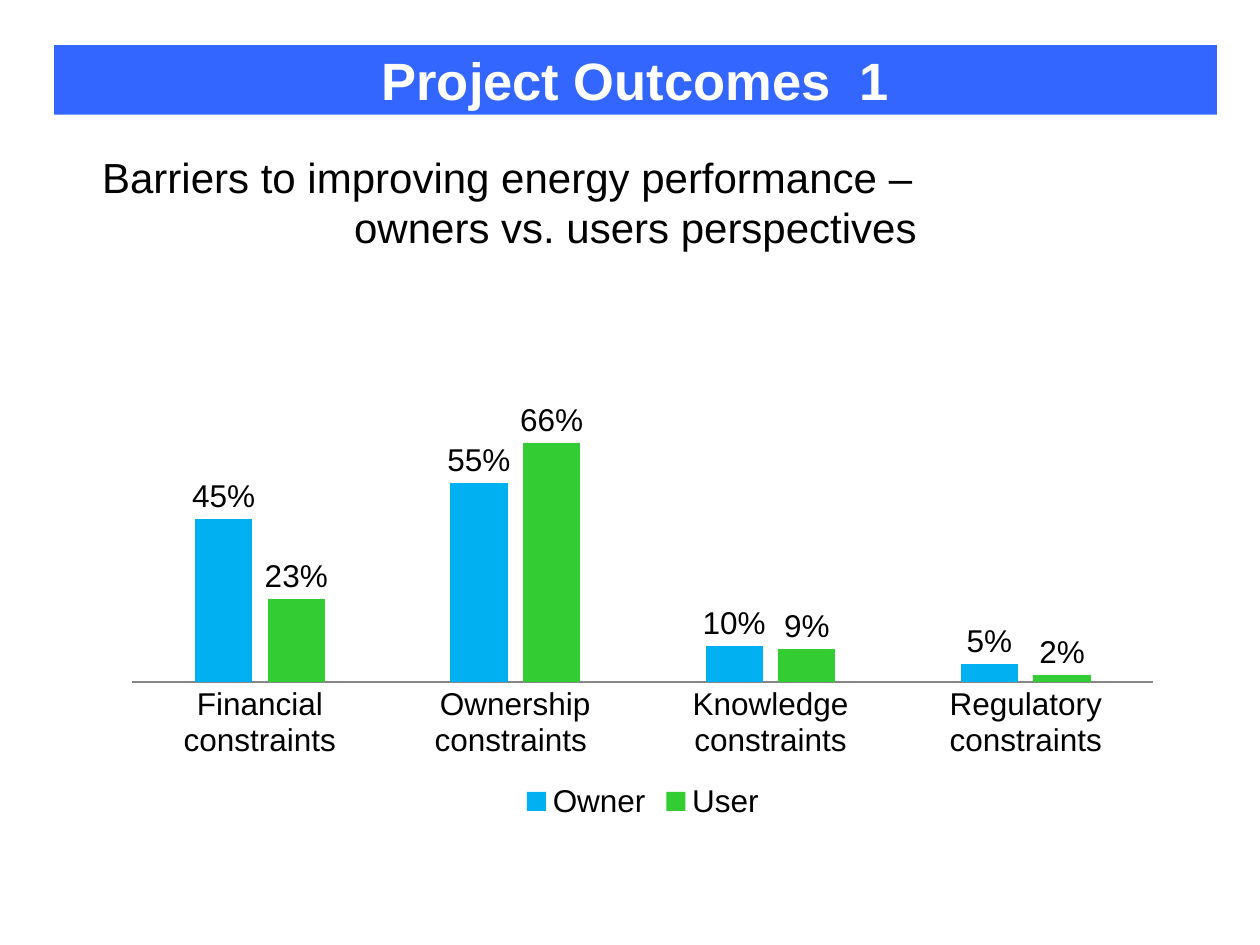
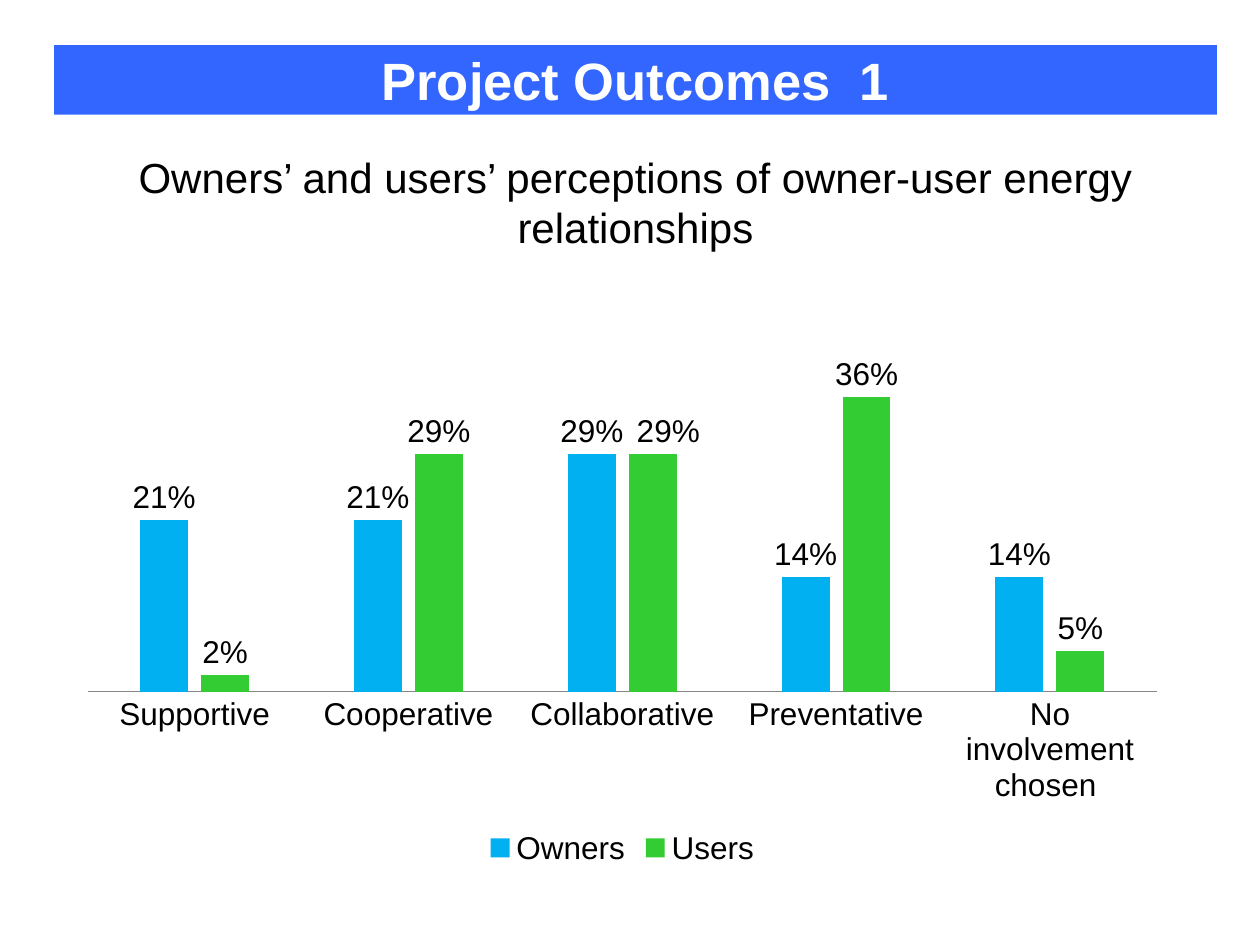
from lxml.etree import SubElement
from pptx import Presentation
from pptx.chart.data import CategoryChartData
from pptx.dml.color import RGBColor
from pptx.enum.chart import (XL_CHART_TYPE as CT, XL_LABEL_POSITION as LP,
                             XL_LEGEND_POSITION as LEG, XL_TICK_LABEL_POSITION as TLP,
                             XL_TICK_MARK as TM)
from pptx.enum.text import MSO_ANCHOR as ANCHOR, MSO_AUTO_SIZE as FIT, PP_ALIGN as AL
from pptx.oxml.ns import qn
from pptx.util import Cm, Pt

# Content
TITLE = "Project Outcomes  1"
SLIDES = [
    {"heading": [("Barriers to improving energy performance –", AL.LEFT, 0.72),
                 ("owners vs. users perspectives", AL.CENTER, 0)],
     "categories": ["Financial constraints", "Ownership constraints ",
                    "Knowledge constraints", "Regulatory constraints"],
     "series": {"Owner": (0.45, 0.55, 0.10, 0.05),
                "User": (0.23, 0.66, 0.09, 0.02)},
     "box": (2.24, 6.25, 21.44, 10.39), "maximum": 1, "step": 0.2, "nudges": []},
    {"heading": [("Owners’ and users’ perceptions of owner-user energy relationships",
                  AL.CENTER, 0)],
     "categories": ["Supportive", "Cooperative", "Collaborative", "Preventative",
                    "No involvement chosen "],
     "series": {"Owners": (0.21, 0.21, 0.29, 0.14, 0.14),
                "Users": (0.02, 0.29, 0.29, 0.36, 0.05)},
     "box": (1.32, 5.46, 22.45, 12.12), "maximum": 0.5, "step": 0.1,
     "nudges": [(1, 2, 0.014)]},  # series, point, shift right
]

# Shared style
COLORS = {"band": "3366FF", "white": "FFFFFF", "text": "000000", "axis": "868686"}
SERIES_COLORS = ["00B0F0", "33CC33"]
TITLE_BOX = (1.09, 0.91, 23.44, 1.4)
HEADING_BOX = (1.09, 2.92, 23.44, 3.33)
TITLE_FONT = {"name": "Arial", "size": Pt(30), "bold": True}
HEADING_FONT = {"name": "Arial", "size": Pt(24)}
CHART_FONT = {"name": "Arial", "size": Pt(18), "bold": False}


def apply(obj, values):
    for name, value in values.items():
        setattr(obj, name, value)


def style_font(font, values, color):
    apply(font, values)
    font.color.rgb = RGBColor.from_string(color)


def fill(fmt, color):
    fmt.fill.solid()
    fmt.fill.fore_color.rgb = RGBColor.from_string(color)


def add_title(slide):
    sp = slide.shapes.title
    apply(sp, dict(zip(("left", "top", "width", "height"), map(Cm, TITLE_BOX))))
    fill(sp, COLORS["band"])
    tf = sp.text_frame
    tf.text = TITLE
    apply(tf, {"auto_size": FIT.NONE, "vertical_anchor": ANCHOR.MIDDLE})
    p = tf.paragraphs[0]
    p.alignment = AL.CENTER
    style_font(p.runs[0].font, TITLE_FONT, COLORS["white"])


def add_heading(slide, lines):
    tf = slide.shapes.add_textbox(*map(Cm, HEADING_BOX)).text_frame
    tf.word_wrap = True
    for i, (text, align, indent) in enumerate(lines):
        p = tf.add_paragraph() if i else tf.paragraphs[0]
        p.alignment = align
        if indent:
            p._p.get_or_add_pPr().set("marL", str(Cm(indent)))
        r = p.add_run()
        r.text = text
        style_font(r.font, HEADING_FONT, COLORS["text"])


def nudge_label(series, point, shift):
    series.points[point].data_label.position = LP.OUTSIDE_END
    label = series._element.find(f"{qn('c:dLbls')}/{qn('c:dLbl')}")
    layout = SubElement(label, qn("c:layout"))
    label.insert(1, layout)
    manual = SubElement(layout, qn("c:manualLayout"))
    for axis, value in (("x", shift), ("y", 0)):
        SubElement(manual, qn(f"c:{axis}")).set("val", str(value))


def add_chart(slide, spec):
    data = CategoryChartData(number_format="0%")
    data.categories = spec["categories"]
    for name, values in spec["series"].items():
        data.add_series(name, values)
    chart = slide.shapes.add_chart(CT.COLUMN_CLUSTERED, *map(Cm, spec["box"]), data).chart
    style_font(chart.font, CHART_FONT, COLORS["text"])
    apply(chart, {"has_title": False, "has_legend": True})
    apply(chart.legend, {"position": LEG.BOTTOM, "include_in_layout": False})

    # Axes
    apply(chart.value_axis, {"minimum_scale": 0, "maximum_scale": spec["maximum"],
                             "major_unit": spec["step"], "visible": False,
                             "has_major_gridlines": False})
    cat = chart.category_axis
    apply(cat, {"major_tick_mark": TM.NONE, "minor_tick_mark": TM.NONE,
                "tick_label_position": TLP.NEXT_TO_AXIS})
    cat.format.line.width = Pt(0.75)
    cat.format.line.color.rgb = RGBColor.from_string(COLORS["axis"])

    # Columns and labels
    plot = chart.plots[0]
    apply(plot, {"gap_width": 219, "overlap": -27, "vary_by_categories": False})
    for series, color in zip(plot.series, SERIES_COLORS):
        fill(series.format, color)
        apply(series.data_labels, {"show_value": True, "position": LP.OUTSIDE_END,
                                   "number_format": "0%",
                                   "number_format_is_linked": False})
    for index, point, shift in spec["nudges"]:
        nudge_label(plot.series[index], point, shift)


def main():
    prs = Presentation()
    apply(prs, {"slide_width": Cm(25.4), "slide_height": Cm(19.05)})
    for content in SLIDES:
        slide = prs.slides.add_slide(prs.slide_layouts[5])
        add_title(slide)
        add_chart(slide, content)
        add_heading(slide, content["heading"])
    prs.save("out.pptx")


if __name__ == "__main__":
    main()
